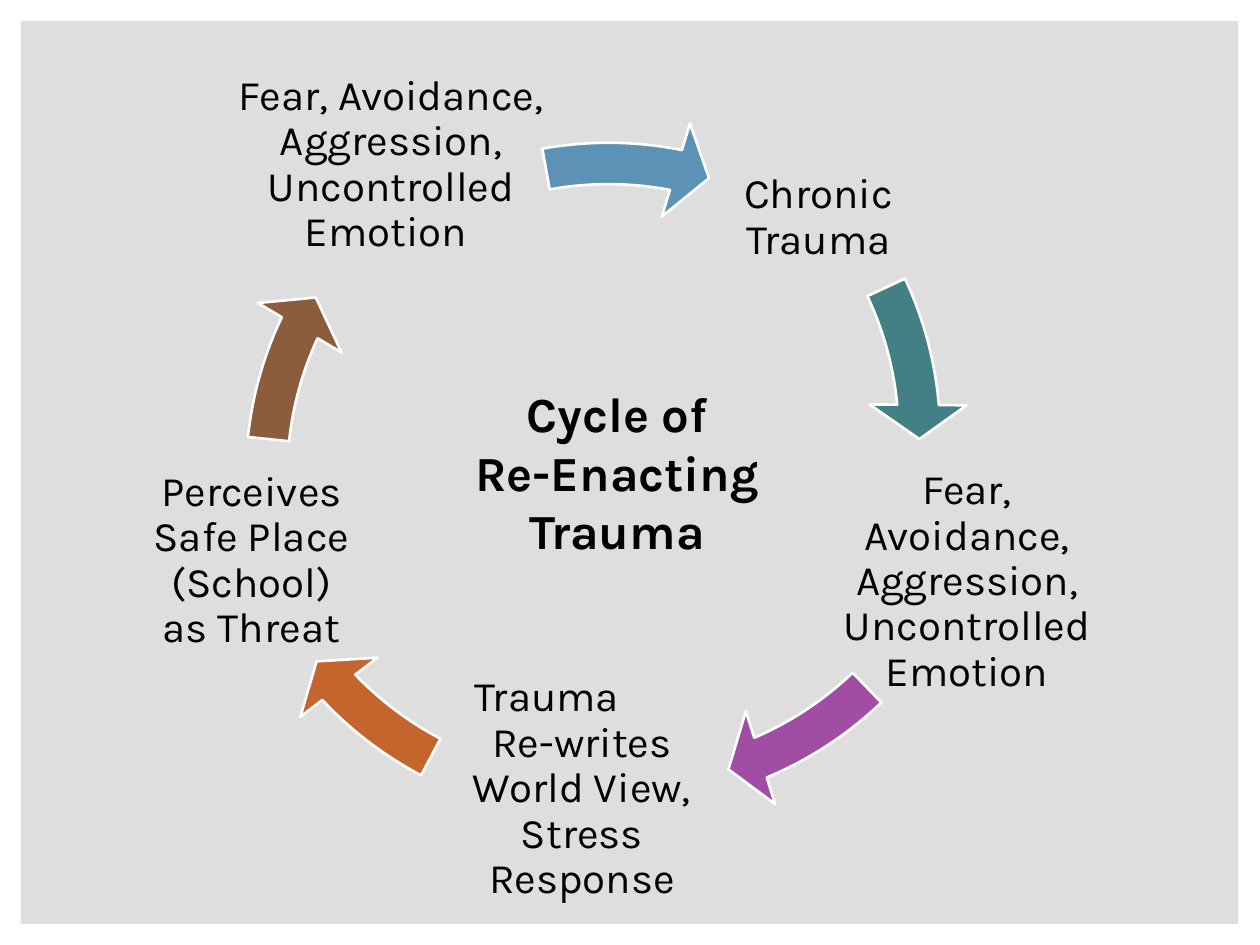
from pptx import Presentation, util as u
from pptx.dml.color import RGBColor
from pptx.enum import shapes, text

PX = 914400 / 126
FONT = "Karla"
BLACK = RGBColor(0x00, 0x00, 0x00)
WHITE = RGBColor(0xFF, 0xFF, 0xFF)
GREY = RGBColor(0xDE, 0xDE, 0xDE)
TEAL = RGBColor(0x43, 0x80, 0x86)
PURPLE = RGBColor(0xA0, 0x4D, 0xA3)
ORANGE = RGBColor(0xC4, 0x65, 0x2D)
BROWN = RGBColor(0x8B, 0x5D, 0x3D)
BLUE = RGBColor(0x5C, 0x92, 0xB5)

RING_W, RING_H = 799, 796    # box of the circle every arrow lies on
TURN = 0.6                   # adjustment units per degree
FEAR = "Fear, Avoidance, Aggression, Uncontrolled Emotion"

# Label box, label paragraphs, arrow box corner, arrow start and end in degrees, colour
STAGES = [
    ((712, 129, 213, 178), ["Chronic Trauma"], (169, 38), 334.94, 354.92, TEAL),
    ((819, 476, 296, 212), [FEAR], (224, 38), 45.95, 66.94, PURPLE),
    ((455, 667, 254, 244), ["Trauma", "Re-writes World View, Stress Response"],
     (195, 50), 117.9, 136.88, ORANGE),
    ((145, 455, 213, 212), ["Perceives Safe Place (School) as Threat"],
     (218, 78), 186.02, 205, BROWN),
    ((223, 59, 336, 212), [FEAR + " "], (209, 115), 259.7, 281.13, BLUE),
]


def px(n):
    return u.Emu(round(n * PX))


def place(shape, box):
    shape.left, shape.top, shape.width, shape.height = map(px, box)


def style(p, size, bold=False):
    p.alignment = text.PP_ALIGN.CENTER
    p.font.name, p.font.size, p.font.bold = FONT, u.Pt(size), bold
    p.font.color.rgb = BLACK


def add_panel(s, box):
    """Grey panel behind everything, the title included."""
    sp = s.shapes.add_shape(shapes.MSO_SHAPE.RECTANGLE, *map(px, box))
    sp.shadow.inherit = False
    sp.fill.solid()
    sp.fill.fore_color.rgb = GREY
    sp.line.fill.background()
    s.shapes.title.element.addprevious(sp.element)


def add_title(s, box):
    title = s.shapes.title
    place(title, box)
    tf = title.text_frame
    tf.word_wrap = True
    tf.auto_size = text.MSO_AUTO_SIZE.NONE
    tf.vertical_anchor = text.MSO_ANCHOR.TOP
    tf.text = "Cycle of\nRe-Enacting Trauma"
    for p in tf.paragraphs:
        style(p, 28, bold=True)


def add_label(s, box, lines):
    tf = s.shapes.add_textbox(*map(px, box)).text_frame
    tf.word_wrap = True
    tf.vertical_anchor = text.MSO_ANCHOR.MIDDLE
    tf.margin_left = tf.margin_right = tf.margin_top = tf.margin_bottom = px(4)
    tf.text = "\n".join(lines)
    for p in tf.paragraphs:
        style(p, 24)
        p.line_spacing = 0.9
    # An opening word on its own starts near the left edge
    for p in tf.paragraphs[:-1]:
        p.alignment = text.PP_ALIGN.LEFT
        p._p.get_or_add_pPr().set("marL", str(px(16)))


def add_arrow(s, box, start, end, color):
    sp = s.shapes.add_shape(shapes.MSO_SHAPE.CIRCULAR_ARROW, *map(px, box))
    # Band width, head angle, end angle, start angle, head width
    for i, value in enumerate((0.052, 3.355, end * TURN, start * TURN, 0.061)):
        sp.adjustments[i] = value
    sp.shadow.inherit = False
    sp.fill.solid()
    sp.fill.fore_color.rgb = color
    sp.line.color.rgb = WHITE
    sp.line.width = u.Pt(1.5)


def add_cycle(s):
    for box, lines, corner, start, end, color in STAGES:
        add_label(s, box, lines)
        add_arrow(s, (*corner, RING_W, RING_H), start, end, color)


def main():
    prs = Presentation()
    prs.slide_width, prs.slide_height = px(1260), px(945)
    s = prs.slides.add_slide(prs.slide_layouts[5])
    add_panel(s, (21, 21, 1217, 903))
    add_title(s, (433, 377, 368, 190))
    add_cycle(s)
    prs.save("out.pptx")


if __name__ == "__main__":
    main()
